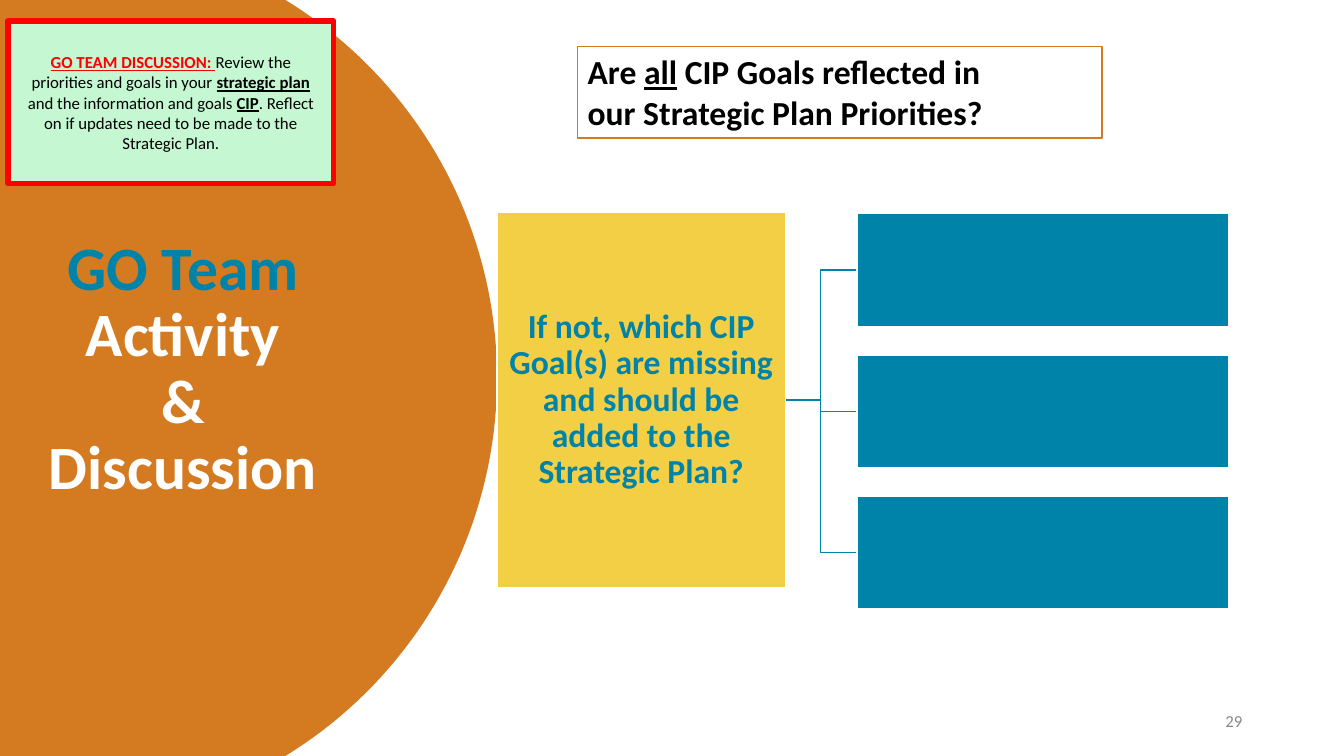
from dataclasses import dataclass
from math import asin, cos, sin

from pptx import Presentation
from pptx.dml.color import RGBColor
from pptx.enum.shapes import MSO_SHAPE as Shape
from pptx.enum.text import MSO_ANCHOR as Anchor, MSO_AUTO_SIZE as AutoSize, PP_ALIGN as Align
from pptx.util import Pt

EMU_PER_PX = 9144  # 100 px to the inch
TITLE_ONLY = 5


@dataclass(frozen=True)
class Theme:
    font: str = "Calibri"
    orange: str = "D47B22"
    blue: str = "0083A9"
    yellow: str = "F3CF45"
    mint: str = "C4F7D2"
    red: str = "FF0000"
    white: str = "FFFFFF"
    black: str = "000000"
    gray: str = "898989"
    title_size: int = 44
    heading_size: int = 24
    small_size: int = 12
    thin_line: int = 1
    thick_line: int = 4


THEME = Theme()


@dataclass(frozen=True)
class Box:
    left: int
    top: int
    width: int
    height: int
    fill: str | None = None
    line: str | None = None
    line_width: int = THEME.thin_line

    @property
    def middle(self) -> int:
        return self.top + self.height // 2


@dataclass(frozen=True)
class Span:
    text: str
    color: str | None = None
    marked: bool = False  # bold and underlined


@dataclass(frozen=True)
class Style:
    size: int
    color: str = THEME.black
    bold: bool | None = None
    align: Align = Align.CENTER
    anchor: Anchor = Anchor.MIDDLE
    line_spacing: float = 1.0
    space_after: int = 0
    margins: tuple[int, int] = (10, 5)


def px(length: float) -> int:
    return round(length * EMU_PER_PX)


def paint(shape, fill: str | None, line: str | None, line_width: int = THEME.thin_line) -> None:
    shape.shadow.inherit = False
    if fill:
        shape.fill.solid()
        shape.fill.fore_color.rgb = RGBColor.from_string(fill)
    else:
        shape.fill.background()
    if line:
        shape.line.color.rgb = RGBColor.from_string(line)
        shape.line.width = Pt(line_width)
    else:
        shape.line.fill.background()


def place(shape, box: Box) -> None:
    shape.left, shape.top = px(box.left), px(box.top)
    shape.width, shape.height = px(box.width), px(box.height)


def draw_box(slide, box: Box):
    shape = slide.shapes.add_shape(Shape.RECTANGLE, 0, 0, 0, 0)
    place(shape, box)
    paint(shape, box.fill, box.line, box.line_width)
    return shape


def draw_path(slide, points: list[tuple[float, float]], fill: str | None, line: str | None):
    corners = [(px(x), px(y)) for x, y in points]
    builder = slide.shapes.build_freeform(*corners[0])
    builder.add_line_segments(corners[1:], close=fill is not None)
    shape = builder.convert_to_shape()
    paint(shape, fill, line)
    return shape


def write(shape, paragraphs: list[list[Span]], style: Style) -> None:
    frame = shape.text_frame
    frame.word_wrap = True
    frame.auto_size = AutoSize.NONE
    frame.vertical_anchor = style.anchor
    frame.margin_left = frame.margin_right = px(style.margins[0])
    frame.margin_top = frame.margin_bottom = px(style.margins[1])
    for index, spans in enumerate(paragraphs):
        paragraph = frame.add_paragraph() if index else frame.paragraphs[0]
        paragraph.alignment = style.align
        paragraph.line_spacing = style.line_spacing
        paragraph.space_before, paragraph.space_after = Pt(0), Pt(style.space_after)
        paragraph.font.name = THEME.font
        paragraph.font.size = Pt(style.size)
        paragraph.font.bold = style.bold
        paragraph.font.color.rgb = RGBColor.from_string(style.color)
        for span in spans:
            add_span(paragraph, span)


def add_span(paragraph, span: Span) -> None:
    for index, text in enumerate(span.text.split("\n")):
        if index:
            paragraph.add_line_break()
        if not text:
            continue
        run = paragraph.add_run()
        run.text = text
        if span.color:
            run.font.color.rgb = RGBColor.from_string(span.color)
        if span.marked:
            run.font.bold = run.font.underline = True


def draw_panel(slide):
    """Left panel whose right edge is an arc over the full slide height."""
    center_x, center_y, radius, steps = 53, 375, 440, 80
    half_angle = asin(center_y / radius)
    angles = [half_angle * (2 * step / steps - 1) for step in range(steps + 1)]
    arc = [(center_x + radius * cos(a), center_y + radius * sin(a)) for a in angles]
    return draw_path(slide, [(0, 0), *arc, (0, 750)], THEME.orange, None)


def draw_tree(slide) -> None:
    """Question box joined to three empty answer boxes."""
    question = Box(493, 211, 286, 372, THEME.yellow, THEME.white)
    answers = [Box(850, 212 + 140 * row, 369, 112, THEME.blue, THEME.white) for row in range(3)]
    right = question.left + question.width
    bend = (right + answers[0].left) // 2
    for answer in answers:
        points = [(right, question.middle), (bend, question.middle),
                  (bend, answer.middle), (answer.left, answer.middle)]
        draw_path(slide, points, None, THEME.blue)
    text = "If not, which CIP Goal(s) are missing and should be added to the Strategic Plan?"
    write(draw_box(slide, question), [[Span(text)]],
          Style(THEME.heading_size, THEME.blue, True, line_spacing=0.9, margins=(2, 2)))
    for answer in answers:
        draw_box(slide, answer)


def main() -> None:
    presentation = Presentation()
    presentation.slide_width, presentation.slide_height = px(1333), px(750)
    slide = presentation.slides.add_slide(presentation.slide_layouts[TITLE_ONLY])

    # Panel and title, with the panel behind
    title = slide.shapes.title
    place(title, Box(20, 211, 323, 312))
    write(title, [[Span("GO Team\n", THEME.blue), Span("Activity\n&\nDiscussion")]],
          Style(THEME.title_size, THEME.white, True, line_spacing=0.9))
    title._element.addprevious(draw_panel(slide)._element)

    # Slide number
    number = slide.shapes.add_textbox(px(942), px(695), px(300), px(40))
    write(number, [[Span("29")]],
          Style(THEME.small_size, THEME.gray, align=Align.RIGHT, space_after=6))

    # Discussion prompt
    prompt = Box(8, 21, 323, 161, THEME.mint, THEME.red, THEME.thick_line)
    write(draw_box(slide, prompt), [[
        Span("GO TEAM DISCUSSION: ", THEME.red, True),
        Span("Review the priorities and goals in your "),
        Span("strategic plan ", marked=True),
        Span("and the information and goals "),
        Span("CIP", marked=True),
        Span(". Reflect on if updates need to be made to the Strategic Plan."),
    ]], Style(THEME.small_size, margins=(15, 5)))

    # Heading question
    heading = Box(573, 46, 520, 91, line=THEME.orange)
    write(draw_box(slide, heading), [
        [Span("Are "), Span("all", marked=True), Span(" CIP Goals reflected in")],
        [Span("our Strategic Plan Priorities?")],
    ], Style(THEME.heading_size, bold=True, align=Align.LEFT, anchor=Anchor.TOP))

    draw_tree(slide)
    presentation.save("out.pptx")


if __name__ == "__main__":
    main()
